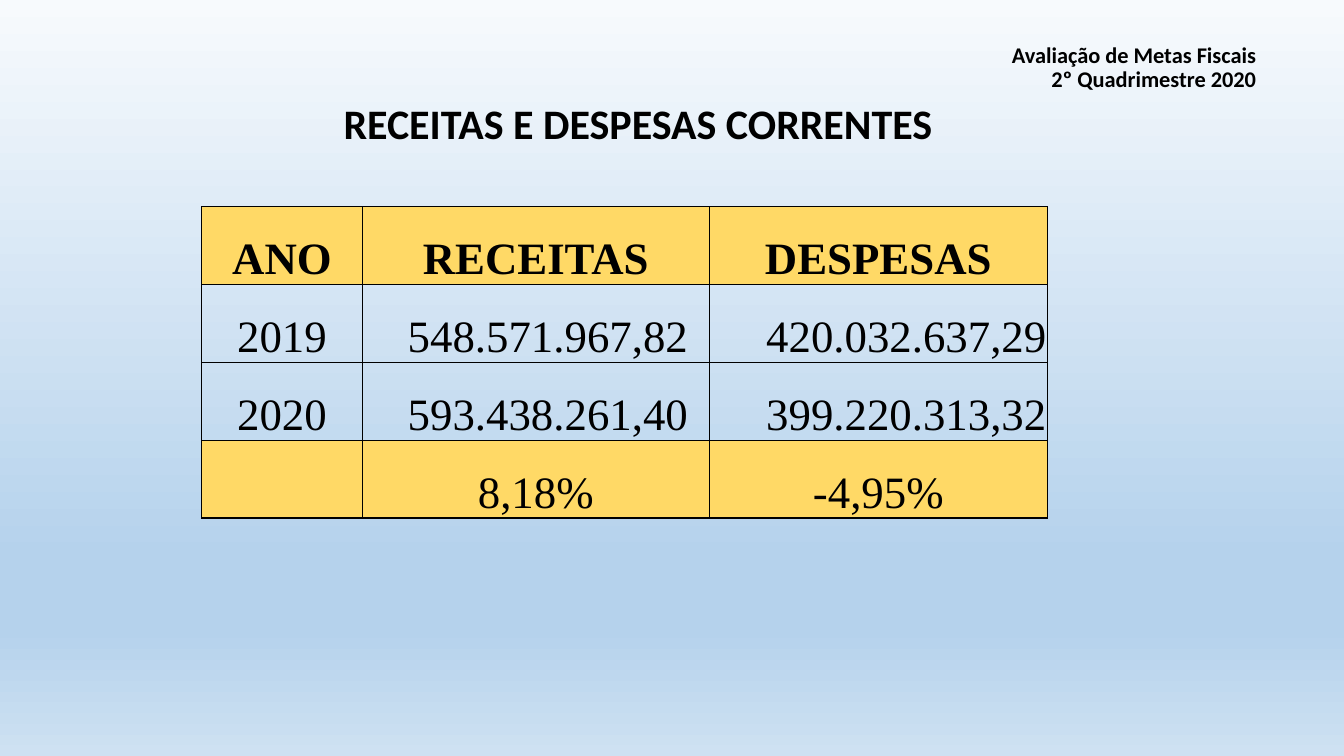
import lxml.etree
import pptx
import pptx.dml.color
import pptx.enum.text
import pptx.oxml
import pptx.oxml.ns
import pptx.util

RGBColor = pptx.dml.color.RGBColor
Inches = pptx.util.Inches
Pt = pptx.util.Pt
Align = pptx.enum.text.PP_ALIGN
Anchor = pptx.enum.text.MSO_ANCHOR

BLACK = RGBColor(0x00, 0x00, 0x00)
GOLD = RGBColor(0xFF, 0xD9, 0x66)
SKY_STOPS = [
    (0, RGBColor(0xF7, 0xFA, 0xFD)),
    (74, RGBColor(0xB5, 0xD2, 0xEC)),
    (83, RGBColor(0xB5, 0xD2, 0xEC)),
    (100, RGBColor(0xCE, 0xE1, 0xF2)),
]

HEADING_BOX = (1.67, 0.33, 10.89, 0.64)
SUBJECT_BOX = (1.33, 0.97, 10, 0.81)
BUDGET_BOX = (2, 2.05, 8.39, 3.09)

COLUMN_SHARES = (0.19, 0.41, 0.4)
BUDGET_ROWS = [
    ("ANO", "RECEITAS", "DESPESAS"),
    ("2019", "548.571.967,82", "420.032.637,29"),
    ("2020", "593.438.261,40", "399.220.313,32"),
    ("", "8,18%", "-4,95%"),
]
AMOUNT_ALIGNS = (Align.CENTER, Align.LEFT, Align.RIGHT)
AMOUNT_INDENT = 0.45
CELL_INSET = 0.01


def apply_format(target, values):
    for name, value in values.items():
        setattr(target, name, value)


def format_font(font, face, size, bold):
    apply_format(font, {"name": face, "size": Pt(size), "bold": bold})
    font.color.rgb = BLACK


def paint_background(slide):
    fill = slide.background.fill
    fill.solid()
    properties = slide.background._cSld.bg.bgPr
    properties.remove(properties[0])
    stops = "".join(
        f'<a:gs pos="{share * 1000}"><a:srgbClr val="{color}"/></a:gs>'
        for share, color in SKY_STOPS
    )
    gradient = pptx.oxml.parse_xml(
        f'<a:gradFill {pptx.oxml.ns.nsdecls("a")} rotWithShape="1">'
        f'<a:gsLst>{stops}</a:gsLst><a:lin ang="5400000" scaled="0"/></a:gradFill>'
    )
    properties.insert(0, gradient)


def place_heading(placeholder, box, lines, size, align, anchor, space_before):
    left, top, width, height = map(Inches, box)
    apply_format(placeholder, {"left": left, "top": top, "width": width, "height": height})
    frame = placeholder.text_frame
    apply_format(frame, {
        "word_wrap": True,
        "auto_size": pptx.enum.text.MSO_AUTO_SIZE.NONE,
        "vertical_anchor": anchor,
    })
    paragraph = frame.paragraphs[0]
    apply_format(paragraph, {
        "alignment": align,
        "line_spacing": 0.9,
        "space_before": Pt(space_before),
    })
    for index, line in enumerate(lines):
        if index:
            paragraph.add_line_break()
        run = paragraph.add_run()
        run.text = line
        format_font(run.font, "Calibri", size, True)


def border_cell(cell):
    properties = cell._tc.get_or_add_tcPr()
    for index, side in enumerate(("lnL", "lnR", "lnT", "lnB")):
        properties.insert(index, pptx.oxml.parse_xml(
            f'<a:{side} {pptx.oxml.ns.nsdecls("a")} w="12700">'
            f'<a:solidFill><a:srgbClr val="{BLACK}"/></a:solidFill></a:{side}>'
        ))


def fill_cell(cell, text, align, highlighted, bold):
    indent = AMOUNT_INDENT if align == Align.LEFT else CELL_INSET
    apply_format(cell, {
        "text": text,
        "vertical_anchor": Anchor.BOTTOM,
        "margin_left": Inches(indent),
        "margin_right": Inches(CELL_INSET),
        "margin_top": Inches(CELL_INSET),
        "margin_bottom": 0,
    })
    paragraph = cell.text_frame.paragraphs[0]
    paragraph.alignment = align
    format_font(paragraph.font, "Times New Roman", 32, bold)
    for run in paragraph.runs:
        format_font(run.font, "Times New Roman", 32, bold)
    if highlighted:
        cell.fill.solid()
        cell.fill.fore_color.rgb = GOLD
    else:
        cell.fill.background()
    border_cell(cell)


def place_budget(slide, box):
    left, top, width, height = map(Inches, box)
    last = len(BUDGET_ROWS) - 1
    budget = slide.shapes.add_table(
        len(BUDGET_ROWS), len(COLUMN_SHARES), left, top, width, height
    ).table
    apply_format(budget, {"first_row": False, "horz_banding": False})
    for column, share in zip(budget.columns, COLUMN_SHARES):
        column.width = int(width * share)
    for row_index, texts in enumerate(BUDGET_ROWS):
        highlighted = row_index in (0, last)
        for column_index, text in enumerate(texts):
            align = Align.CENTER if highlighted else AMOUNT_ALIGNS[column_index]
            fill_cell(budget.cell(row_index, column_index), text, align,
                      highlighted, row_index == 0)


def main():
    deck = pptx.Presentation()
    apply_format(deck, {"slide_width": Inches(13.33), "slide_height": Inches(7.5)})
    slide = deck.slides.add_slide(deck.slide_layouts[0])
    paint_background(slide)
    place_heading(slide.shapes.title, HEADING_BOX,
                  ["Avaliação de Metas Fiscais", "2º Quadrimestre 2020"],
                  16, Align.RIGHT, Anchor.BOTTOM, 0)
    place_heading(slide.placeholders[1], SUBJECT_BOX,
                  ["RECEITAS E DESPESAS CORRENTES"],
                  30, Align.CENTER, Anchor.TOP, 10)
    place_budget(slide, BUDGET_BOX)
    deck.save("out.pptx")


if __name__ == "__main__":
    main()
